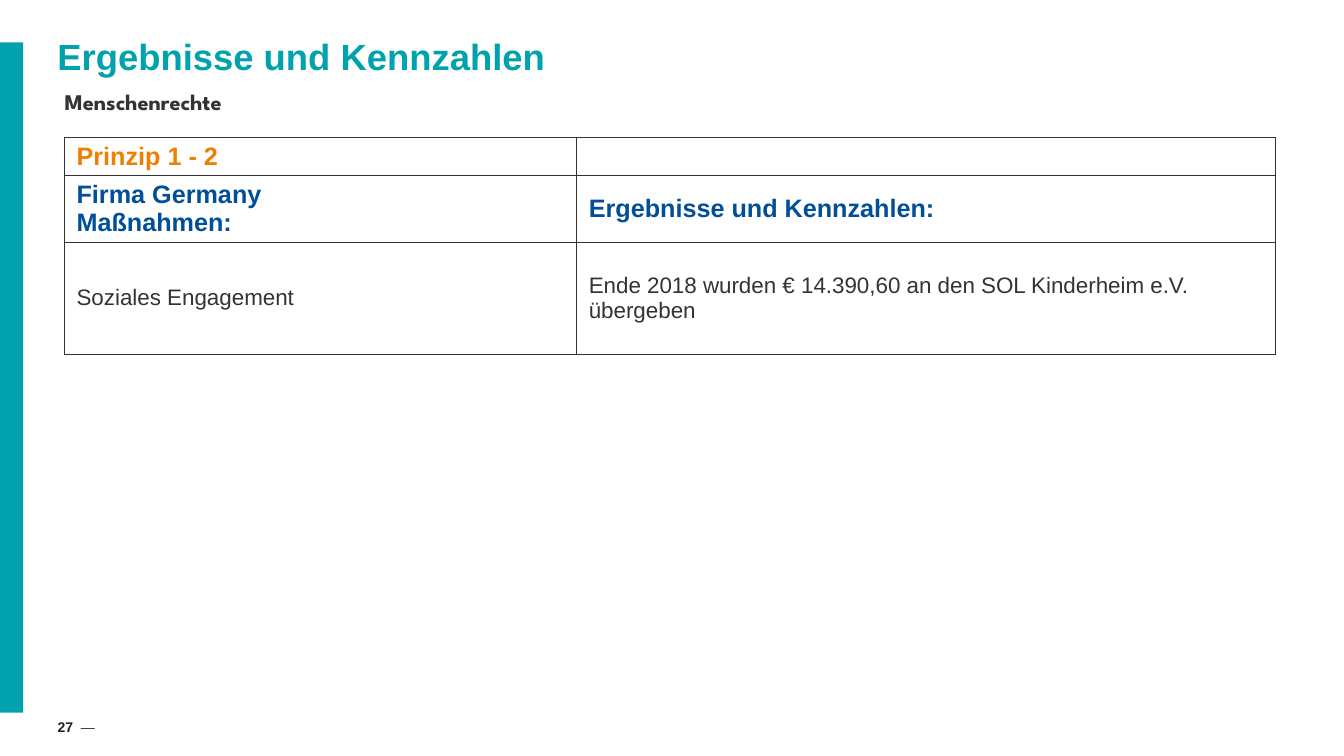
from dataclasses import dataclass

from lxml import etree
from pptx import Presentation
from pptx import util as u
from pptx.dml.color import RGBColor
from pptx.enum import shapes, text
from pptx.oxml.ns import qn


@dataclass(frozen=True)
class Theme:
    teal: str = "00A3AD"
    orange: str = "EE7F00"
    blue: str = "004F97"
    gray: str = "333333"
    ink: str = "232020"
    sans: str = "Arial"
    geo: str = "League Spartan"
    round: str = "Quicksand"
    title: int = 26
    head: int = 18
    body: int = 16
    small: int = 10
    rule: float = 0.5


class Deck:
    def __init__(self, theme):
        self.theme = theme
        self.file = Presentation()
        self.file.slide_width = u.Inches(13.33)
        self.file.slide_height = u.Inches(7.5)
        self.slide = self.file.slides.add_slide(self.file.slide_layouts[5])

    def font(self, item, size, color, bold=False, face=None):
        font = item.font
        font.name = face or self.theme.sans
        font.size = u.Pt(size)
        font.bold = bold
        font.color.rgb = RGBColor.from_string(color)

    def frame(self, shape, pads=(0, 0, 0, 0), anchor=text.MSO_ANCHOR.TOP):
        frame = shape.text_frame
        frame.word_wrap = True
        frame.auto_size = text.MSO_AUTO_SIZE.NONE
        frame.vertical_anchor = anchor
        (frame.margin_left, frame.margin_top,
         frame.margin_right, frame.margin_bottom) = map(u.Inches, pads)
        return frame

    def title(self, words, box):
        shape = self.slide.shapes.title
        shape.left, shape.top, shape.width, shape.height = map(u.Inches, box)
        para = self.frame(shape, anchor=text.MSO_ANCHOR.MIDDLE).paragraphs[0]
        para.text = words
        para.alignment = text.PP_ALIGN.LEFT
        para.line_spacing = 0.85
        self.font(para, self.theme.title, self.theme.teal, True)

    def text(self, box, pads=(0, 0, 0, 0)):
        shape = self.slide.shapes.add_textbox(*map(u.Inches, box))
        return self.frame(shape, pads).paragraphs[0]

    def bar(self, box, color):
        shape = self.slide.shapes.add_shape(
            shapes.MSO_SHAPE.RECTANGLE, *map(u.Inches, box))
        shape.shadow.inherit = False
        shape.fill.solid()
        shape.fill.fore_color.rgb = RGBColor.from_string(color)
        shape.line.fill.background()

    def edge(self, cell):
        props = cell._tc.get_or_add_tcPr()
        for n, side in enumerate(("lnL", "lnR", "lnT", "lnB")):
            line = etree.Element(qn("a:" + side), w=str(u.Pt(self.theme.rule)))
            fill = etree.SubElement(line, qn("a:solidFill"))
            etree.SubElement(fill, qn("a:srgbClr"), val=self.theme.gray)
            props.insert(n, line)

    def table(self, box, cols, rows, data):
        grid = self.slide.shapes.add_table(
            len(rows), len(cols), *map(u.Inches, box)).table
        grid.first_row = grid.horz_banding = False
        for col, width in zip(grid.columns, cols):
            col.width = u.Inches(width)
        for row, height in zip(grid.rows, rows):
            row.height = u.Inches(height)
        for row, (size, color, bold, texts) in zip(grid.rows, data):
            for cell, runs in zip(row.cells, texts):
                cell.fill.background()
                self.edge(cell)
                cell.vertical_anchor = text.MSO_ANCHOR.MIDDLE
                cell.margin_left = cell.margin_right = u.Inches(0.12)
                para = cell.text_frame.paragraphs[0]
                for words, face in runs:
                    para.text = para.text if not words else para.text
                    for n, part in enumerate(words.split("\n")):
                        if n:
                            para.add_line_break()
                        run = para.add_run()
                        run.text = part
                        self.font(run, size, color, bold, face)
                self.font(para, size, color, bold)


def main():
    look = Theme()
    deck = Deck(look)

    # Side bar and headings
    deck.bar((0, 0.42, 0.23, 6.65), look.teal)
    deck.title("Ergebnisse und Kennzahlen", (0.57, 0.31, 12.07, 0.56))
    sub = deck.text((0.64, 0.87, 12.08, 0.46))
    sub.text = "Menschenrechte"
    deck.font(sub, look.body, look.gray, True, look.geo)

    # Page number
    page = deck.text((0.43, 7.08, 0.61, 0.26), (0.08, 0.05, 0, 0.05))
    page.alignment = text.PP_ALIGN.CENTER
    for words, color, bold in (("27 ", look.ink, True),
                               (" — ", look.gray, False)):
        run = page.add_run()
        run.text = words
        deck.font(run, look.small, color, bold)

    # Measures and results
    sans = look.sans
    deck.table(
        (0.64, 1.36, 12.01, 2.15), (5.08, 6.93), (0.38, 0.66, 1.11),
        (
            (look.head, look.orange, True,
             ([("Prinzip 1 - 2", sans)], [])),
            (look.head, look.blue, True,
             ([("Firma Germany\nMaßnahmen:", sans)],
              [("Ergebnisse und Kennzahlen:", sans)])),
            (look.body, look.gray, False,
             ([("Soziales Engagement", sans)],
              [("Ende 2018 wurden € ", sans),
               ("14.390,60 ", look.round),
               ("an den SOL Kinderheim e.V. übergeben", sans)])),
        ))

    deck.file.save("out.pptx")


if __name__ == "__main__":
    main()
